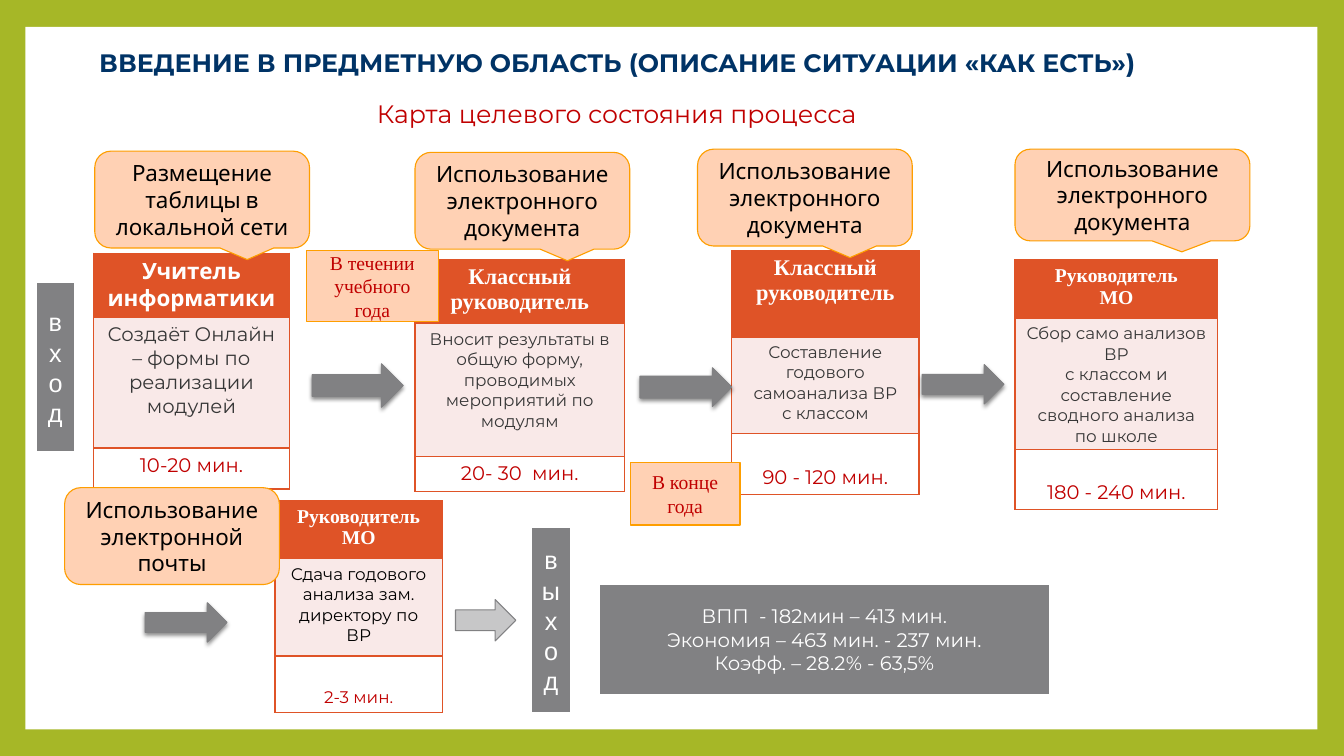
import pptx
import pptx.dml.color
import pptx.enum.shapes
import pptx.enum.text
import pptx.oxml
import pptx.oxml.ns
import pptx.util

Cm = pptx.util.Cm
Pt = pptx.util.Pt
RGB = pptx.dml.color.RGBColor.from_string
FORM = pptx.enum.shapes.MSO_SHAPE
ALIGN = pptx.enum.text.PP_ALIGN
ANCHOR = pptx.enum.text.MSO_ANCHOR
NS = pptx.oxml.ns.nsdecls("a")

COLORS = {
    "frame": "A6B727", "white": "FFFFFF", "navy": "003366", "red": "C00000",
    "orange": "DF5327", "blush": "F9E9E8", "peach": "FFD1B4", "amber": "FE9E00",
    "gray": "818183", "dark_gray": "757577", "silver": "C7C7C8",
    "charcoal": "373737", "black": "000000",
}


def write(frame, text, font, size, color, bold=False, align=ALIGN.CENTER):
    frame.word_wrap = True
    for index, line in enumerate(text.split("\n")):
        paragraph = frame.paragraphs[0] if index == 0 else frame.add_paragraph()
        paragraph.alignment = align
        run = paragraph.add_run()
        run.text = line
        run.font.name = font
        run.font.size = Pt(size)
        run.font.bold = bold
        run.font.color.rgb = RGB(COLORS[color])


def draw(form, box, fill, line=None, weight=0.79):
    shape = slide.shapes.add_shape(form, *map(Cm, box))
    shape.shadow.inherit = False
    shape.fill.solid()
    shape.fill.fore_color.rgb = RGB(COLORS[fill])
    if line:
        shape.line.color.rgb = RGB(COLORS[line])
        shape.line.width = Pt(weight)
    else:
        shape.line.fill.background()
    shape.text_frame.vertical_anchor = ANCHOR.MIDDLE
    return shape


deck = pptx.Presentation()
deck.slide_width = Cm(33.87)
deck.slide_height = Cm(19.05)
slide = deck.slides.add_slide(deck.slide_layouts[6])
slide.background.fill.solid()
slide.background.fill.fore_color.rgb = RGB(COLORS["frame"])
draw(FORM.RECTANGLE, (0.64, 0.68, 32.56, 17.7), "white")

headings = [
    ((1.5, 1.07, 28.3, 1.02), "ВВЕДЕНИЕ В ПРЕДМЕТНУЮ ОБЛАСТЬ (ОПИСАНИЕ СИТУАЦИИ «КАК ЕСТЬ») ",
     "navy", True, ALIGN.CENTER),
    ((9.25, 2.36, 13.74, 1.02), "Карта целевого состояния процесса", "red", False, ALIGN.LEFT),
]
for box, text, color, bold, align in headings:
    heading = slide.shapes.add_textbox(*map(Cm, box))
    write(heading.text_frame, text, "Montserrat", 18, color, bold, align)

stages = [
    ((2.36, 6.38, 4.93), (1.63, 3.28, 1.03),
     ("Учитель информатики", "Cabin", 16),
     ("Создаёт Онлайн – формы по реализации модулей", 14, "charcoal"),
     ("10-20 мин.", 14, ANCHOR.TOP)),
    ((10.46, 6.55, 5.28), (1.59, 3.35, 0.88),
     ("Классный руководитель", "Times New Roman", 16),
     ("Вносит результаты в общую форму, проводимых мероприятий по модулям", 12, "charcoal"),
     ("20- 30  мин.", 14, ANCHOR.TOP)),
    ((18.44, 6.32, 4.72), (2.17, 2.44, 1.54),
     ("Классный руководитель", "Times New Roman", 16),
     ("Составление годового самоанализа ВР\nс классом", 12, "charcoal"),
     ("90 - 120 мин.", 14, ANCHOR.BOTTOM)),
    ((25.58, 6.55, 5.11), (1.47, 3.28, 1.52),
     ("Руководитель\nМО", "Times New Roman", 14),
     ("Сбор само анализов ВР\nс классом и составление сводного анализа по школе", 12, "charcoal"),
     ("180 - 240 мин.", 14, ANCHOR.BOTTOM)),
    ((6.93, 12.62, 4.22), (1.46, 2.45, 1.43),
     ("Руководитель\nМО", "Times New Roman", 14),
     ("Сдача годового анализа зам. директору по ВР", 12, "black"),
     ("2-3 мин.", 12, ANCHOR.BOTTOM)),
]
for (left, top, width), heights, (role, role_font, role_size), (task, task_size, task_color), \
        (duration, duration_size, duration_anchor) in stages:
    stage = slide.shapes.add_table(3, 1, Cm(left), Cm(top), Cm(width), Cm(sum(heights))).table
    rows = [
        (role, role_font, role_size, "white", True, "orange", ANCHOR.TOP),
        (task, "Montserrat", task_size, task_color, False, "blush", ANCHOR.TOP),
        (duration, "Montserrat", duration_size, "red", False, "white", duration_anchor),
    ]
    for index, (text, font, size, color, bold, fill, anchor) in enumerate(rows):
        stage.rows[index].height = Cm(heights[index])
        cell = stage.cell(index, 0)
        cell.vertical_anchor = anchor
        for side in "LRTB":
            cell._tc.get_or_add_tcPr().append(pptx.oxml.parse_xml(
                f'<a:ln{side} {NS} w="12700"><a:solidFill><a:srgbClr val="{COLORS["orange"]}"/>'
                f'</a:solidFill></a:ln{side}>'))
        cell.fill.solid()
        cell.fill.fore_color.rgb = RGB(COLORS[fill])
        write(cell.text_frame, text, font, size, color, bold)

gray_blocks = [
    ((0.86, 7.06, 1.07, 4.39), "вход", "Arial", 18),
    ((13.34, 13.23, 1.09, 4.8), "выход", "Arial", 18),
    ((15.04, 14.66, 11.48, 2.9),
     "ВПП  - 182мин – 413 мин.\nЭкономия – 463 мин. - 237 мин.\nКоэфф. – 28.2% - 63,5%",
     "Montserrat", 14),
]
for box, text, font, size in gray_blocks:
    block = draw(FORM.RECTANGLE, box, "gray", "white", 4.25)
    write(block.text_frame, text, font, size, "white")

steps = [
    ((7.87, 9.17, 2.29, 1.09), 0.5),
    ((16.13, 9.27, 2.31, 0.97), 0.567),
    ((23.24, 9.19, 2.06, 0.99), 0.5),
    ((3.66, 15.19, 2.06, 0.99), 0.5),
]
for box, shaft in steps:
    step = draw(FORM.RIGHT_ARROW, box, "gray", "gray")
    step.adjustments[0] = shaft
    properties = step._element.spPr
    stops = "".join(
        f'<a:gs pos="{position}"><a:srgbClr val="{COLORS[color]}"/></a:gs>'
        for position, color in ((0, "gray"), (90000, "gray"), (100000, "dark_gray")))
    properties.replace(properties.find(pptx.oxml.ns.qn("a:solidFill")), pptx.oxml.parse_xml(
        f'<a:gradFill {NS}><a:gsLst>{stops}</a:gsLst><a:path path="circle">'
        '<a:fillToRect l="100000" t="100000" r="100000" b="100000"/></a:path></a:gradFill>'))
    properties.find(pptx.oxml.ns.qn("a:effectLst")).append(pptx.oxml.parse_xml(
        f'<a:outerShdw {NS} blurRad="38100" dist="25400" dir="5400000" rotWithShape="0">'
        f'<a:srgbClr val="{COLORS["black"]}"><a:alpha val="45000"/></a:srgbClr></a:outerShdw>'))
draw(FORM.RIGHT_ARROW, (11.48, 15.11, 1.52, 1.04), "silver", "gray")

improvements = [
    ((2.39, 3.81, 5.41, 2.44), "Размещение таблицы в локальной сети"),
    ((10.46, 3.84, 5.41, 2.44), "Использование электронного документа"),
    ((17.58, 3.76, 5.41, 2.44), "Использование электронного документа"),
    ((25.58, 3.76, 5.92, 2.31), "Использование электронного документа"),
]
for box, text in improvements:
    callout = draw(FORM.ROUNDED_RECTANGULAR_CALLOUT, box, "peach", "amber")
    callout.adjustments[0] = 0.21
    callout.adjustments[1] = 0.62
    write(callout.text_frame, text, "Cabin", 16, "black")

mail = draw(FORM.ROUNDED_RECTANGLE, (1.63, 12.29, 5.41, 2.44), "peach", "amber")
write(mail.text_frame, "Использование электронной почты", "Cabin", 16, "black")

deadlines = [
    ((7.72, 6.32, 3.33, 1.78), "В течении учебного года"),
    ((15.88, 11.66, 2.77, 1.57), "В конце года"),
]
for box, text in deadlines:
    deadline = draw(FORM.RECTANGLE, box, "peach", "amber")
    write(deadline.text_frame, text, "Times New Roman", 14, "red")

deck.save("out.pptx")
